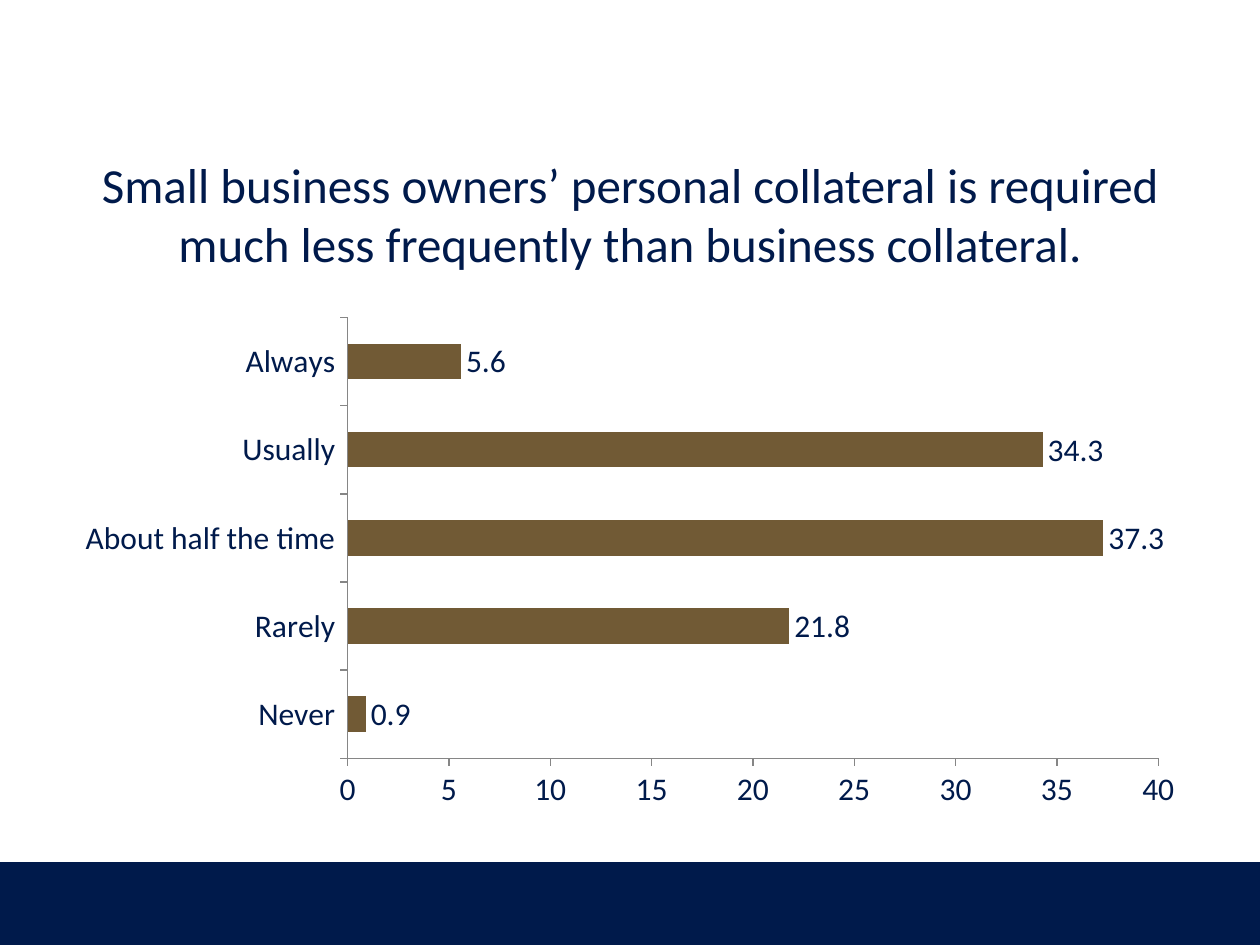
"""Build a slide with a bar chart on personal collateral requirements."""
from pptx import Presentation
from pptx.chart.data import CategoryChartData
from pptx.dml.color import RGBColor
from pptx.enum.chart import XL_CHART_TYPE, XL_LABEL_POSITION, XL_TICK_MARK
from pptx.enum.shapes import MSO_SHAPE
from pptx.enum.text import MSO_ANCHOR, PP_ALIGN
from pptx.util import Cm, Pt

NAVY = RGBColor(0x00, 0x1A, 0x4B)
BROWN = RGBColor(0x71, 0x5A, 0x35)
GRAY = RGBColor(0x86, 0x86, 0x86)
FONT = "Calibri"
MARGIN = Cm(1.27)
CONTENT_WIDTH = Cm(22.86)
FREQUENCIES = {
    "Never": 0.9,
    "Rarely": 21.8,
    "About half the time": 37.3,
    "Usually": 34.3,
    "Always": 5.6,
}


def format_font(font, size, color=NAVY):
    """Apply the slide typeface with a size and colour."""
    font.name = FONT
    font.size = Pt(size)
    font.color.rgb = color


def write_text(shape, text, size=18, color=NAVY, align=PP_ALIGN.CENTER,
               anchor=MSO_ANCHOR.MIDDLE):
    """Write one formatted paragraph into a shape."""
    frame = shape.text_frame
    frame.word_wrap = True
    frame.vertical_anchor = anchor
    paragraph = frame.paragraphs[0]
    paragraph.alignment = align
    run = paragraph.add_run()
    run.text = text
    format_font(run.font, size, color)


def add_footer_band(slide):
    """Add the navy band along the bottom edge."""
    band = slide.shapes.add_shape(
        MSO_SHAPE.RECTANGLE, Cm(0), Cm(17.38), Cm(25.4), Cm(1.67))
    band.fill.solid()
    band.fill.fore_color.rgb = NAVY
    band.line.fill.background()
    band.shadow.inherit = False


def place_title(slide, text):
    """Position and fill the title placeholder."""
    title = slide.shapes.title
    title.left, title.top = MARGIN, Cm(2.72)
    title.width, title.height = CONTENT_WIDTH, Cm(3.18)
    write_text(title, text, size=28)


def format_axis(axis):
    """Give an axis outside ticks, a gray line and no gridlines."""
    axis.has_major_gridlines = False
    axis.major_tick_mark = XL_TICK_MARK.OUTSIDE
    axis.minor_tick_mark = XL_TICK_MARK.NONE
    axis.format.line.color.rgb = GRAY
    axis.format.line.width = Pt(0.75)
    format_font(axis.tick_labels.font, 18)


def add_frequency_chart(slide):
    """Add the bar chart with a value label on each bar."""
    data = CategoryChartData()
    data.categories = list(FREQUENCIES)
    data.add_series("Series 1", list(FREQUENCIES.values()))
    chart = slide.shapes.add_chart(
        XL_CHART_TYPE.BAR_CLUSTERED, MARGIN, Cm(6.2),
        CONTENT_WIDTH, Cm(10.31), data).chart
    chart.has_legend = False
    chart.has_title = False
    format_font(chart.font, 10)
    for axis in (chart.category_axis, chart.value_axis):
        format_axis(axis)
    chart.value_axis.minimum_scale = 0
    chart.value_axis.maximum_scale = 40
    chart.value_axis.major_unit = 5
    chart.value_axis.tick_labels.number_format = "General"
    chart.value_axis.tick_labels.number_format_is_linked = False

    plot = chart.plots[0]
    plot.gap_width = 150
    plot.vary_by_categories = False
    series = plot.series[0]
    series.format.fill.solid()
    series.format.fill.fore_color.rgb = BROWN
    labels = series.data_labels
    labels.show_value = True
    labels.number_format = "#,##0.0"
    labels.number_format_is_linked = False
    labels.position = XL_LABEL_POSITION.OUTSIDE_END
    format_font(labels.font, 18)


def main():
    """Assemble and save the presentation."""
    presentation = Presentation()
    presentation.slide_width, presentation.slide_height = Cm(25.4), Cm(19.05)
    slide = presentation.slides.add_slide(presentation.slide_layouts[5])
    add_footer_band(slide)
    place_title(slide, "Small business owners’ personal collateral is required "
                       "much less frequently than business collateral.")
    add_frequency_chart(slide)
    presentation.save("out.pptx")


if __name__ == "__main__":
    main()
